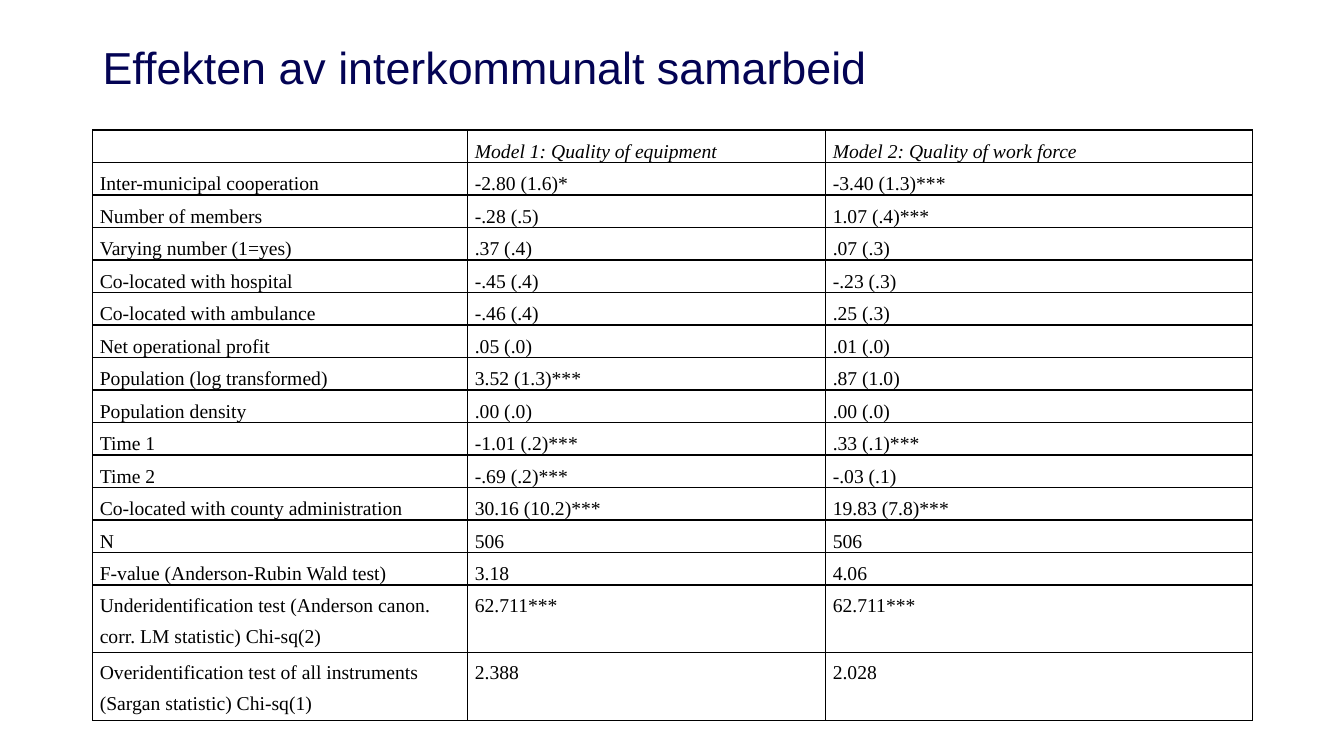
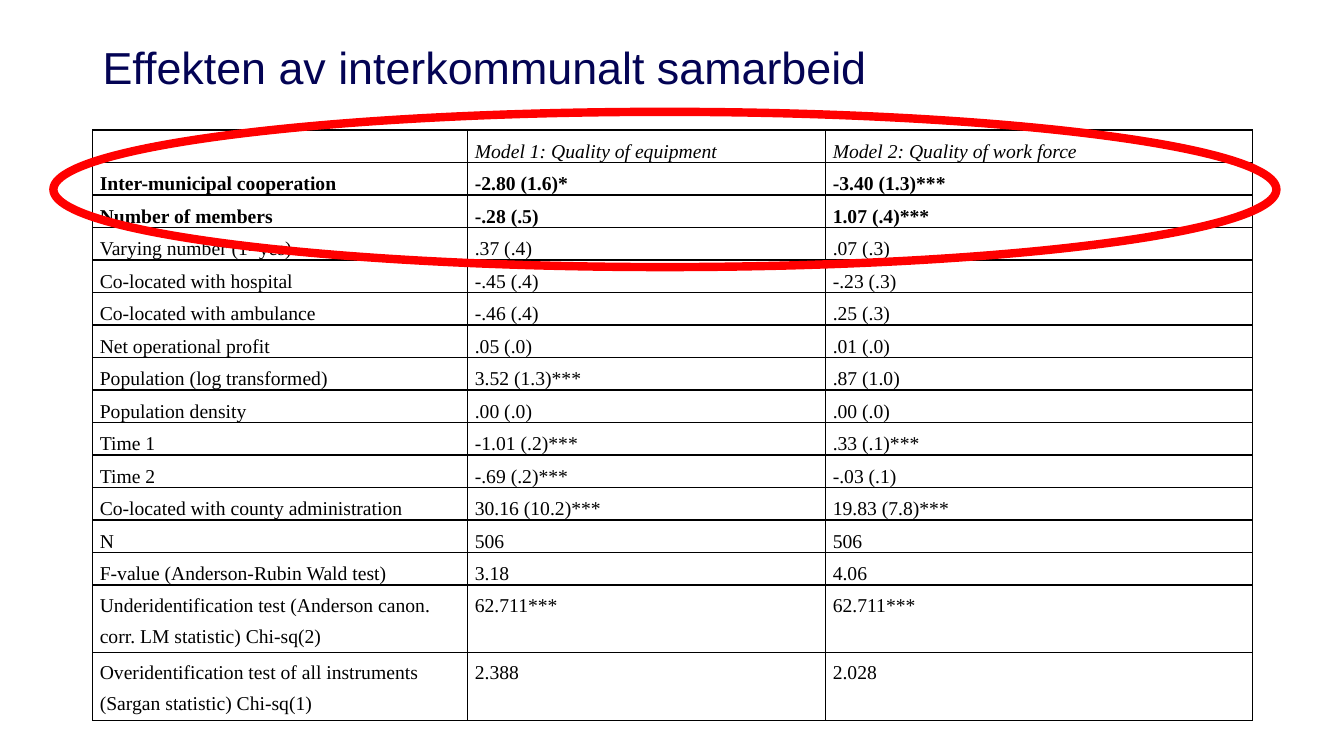
from lxml import etree
from pptx import Presentation
from pptx.dml.color import RGBColor
from pptx.enum.shapes import MSO_SHAPE
from pptx.enum.text import MSO_ANCHOR
from pptx.oxml.ns import qn
from pptx.util import Inches, Pt

OVAL = MSO_SHAPE.OVAL
MID = MSO_ANCHOR.MIDDLE
LOW = MSO_ANCHOR.BOTTOM
HIGHER = MSO_ANCHOR.TOP

TITLE = "Effekten av interkommunalt samarbeid"
ROWS = [
    ("", "Model 1: Quality of equipment", "Model 2: Quality of work force"),
    ("Inter-municipal cooperation", "-2.80 (1.6)*", "-3.40 (1.3)***"),
    ("Number of members", "-.28 (.5)", "1.07 (.4)***"),
    ("Varying number (1=yes)", ".37 (.4)", ".07 (.3)"),
    ("Co-located with hospital", "-.45 (.4)", "-.23 (.3)"),
    ("Co-located with ambulance", "-.46 (.4)", ".25 (.3)"),
    ("Net operational profit", ".05 (.0)", ".01 (.0)"),
    ("Population (log transformed)", "3.52 (1.3)***", ".87 (1.0)"),
    ("Population density", ".00 (.0)", ".00 (.0)"),
    ("Time 1", "-1.01 (.2)***", ".33 (.1)***"),
    ("Time 2", "-.69 (.2)***", "-.03 (.1)"),
    ("Co-located with county administration", "30.16 (10.2)***", "19.83 (7.8)***"),
    ("N", "506", "506"),
    ("F-value (Anderson-Rubin Wald test)", "3.18", "4.06"),
    ("Underidentification test (Anderson canon. corr. LM statistic) Chi-sq(2)",
     "62.711***", "62.711***"),
    ("Overidentification test of all instruments (Sargan statistic) Chi-sq(1)",
     "2.388", "2.028"),
]
SLIDES = [
    {"bold": (), "ring": None},
    {"bold": (1, 2), "ring": (0.53, 1.11, 12.13, 1.54)},
]

THEME = {
    "title": {"name": "Arial", "size": Pt(32), "color": "030354"},
    "cell": {"name": "Times New Roman", "size": Pt(14), "color": "000000"},
    "rule": "000000",
    "ring": "FF0000",
}
WIDE, HIGH = 13.33, 7.5
LEFT, SPAN = 0.92, 11.5
HEAD = (LEFT, 0.37, SPAN, 0.65)
TOP = 1.29
COLS = (3.72, 3.55, 4.23)
TALL = 2
FLAT = len(ROWS) - TALL
EDGES = 2 / 72
DEEP = [4.52 / FLAT - EDGES] * FLAT + [0.67 - EDGES] * TALL
PADS = {"margin_left": Inches(0.07), "margin_right": Inches(0.07),
        "margin_top": 0, "margin_bottom": 0}
ONE = {"cell": {**PADS, "vertical_anchor": LOW},
       "para": {"line_spacing": 1.38, "space_after": Pt(10)}}
TWO = {"cell": {**PADS, "vertical_anchor": HIGHER},
       "para": {"line_spacing": 1.44, "space_after": Pt(10)}}


def put(item, vals):
    for key, val in vals.items():
        setattr(item, key, val)


def box(at):
    return [Inches(n) for n in at]


def write(para, text, style, **more):
    run = para.add_run()
    run.text = text
    for key, val in {**style, **more}.items():
        if key == "color":
            run.font.color.rgb = RGBColor.from_string(val)
        else:
            setattr(run.font, key, val)


def edge(cell):
    props = cell._tc.get_or_add_tcPr()
    for spot, side in enumerate(("lnL", "lnR", "lnT", "lnB")):
        line = etree.Element(qn("a:" + side), w=str(Pt(1)))
        fill = etree.SubElement(line, qn("a:solidFill"))
        etree.SubElement(fill, qn("a:srgbClr"), val=THEME["rule"])
        props.insert(spot, line)


def close(para):
    size = str(int(THEME["cell"]["size"].pt * 100))
    etree.SubElement(para._p, qn("a:endParaRPr"), sz=size)


def add_title(slide):
    frame = slide.shapes.add_textbox(*box(HEAD)).text_frame
    put(frame, {"word_wrap": True, "vertical_anchor": MID})
    para = frame.paragraphs[0]
    para.line_spacing = 0.9
    write(para, TITLE, THEME["title"])


def add_grid(slide, bold):
    area = box((LEFT, TOP, SPAN, sum(DEEP)))
    grid = slide.shapes.add_table(len(ROWS), len(COLS), *area).table
    put(grid, {"first_row": False, "horz_banding": False})
    for col, size in zip(grid.columns, COLS):
        col.width = Inches(size)
    for row, size in zip(grid.rows, DEEP):
        row.height = Inches(size)
    for r, line in enumerate(ROWS):
        form = ONE if r < FLAT else TWO
        for c, text in enumerate(line):
            cell = grid.cell(r, c)
            put(cell, form["cell"])
            cell.fill.background()
            edge(cell)
            para = cell.text_frame.paragraphs[0]
            if text:
                put(para, form["para"])
                write(para, text, THEME["cell"], bold=r in bold, italic=r == 0)
            close(para)


def add_ring(slide, at):
    ring = slide.shapes.add_shape(OVAL, *box(at))
    ring.shadow.inherit = False
    ring.fill.background()
    ring.line.color.rgb = RGBColor.from_string(THEME["ring"])
    ring.line.width = Pt(6)


def main():
    deck = Presentation()
    put(deck, {"slide_width": Inches(WIDE), "slide_height": Inches(HIGH)})
    for plan in SLIDES:
        slide = deck.slides.add_slide(deck.slide_layouts[6])
        add_title(slide)
        add_grid(slide, plan["bold"])
        if plan["ring"]:
            add_ring(slide, plan["ring"])
    deck.save("out.pptx")


if __name__ == "__main__":
    main()
